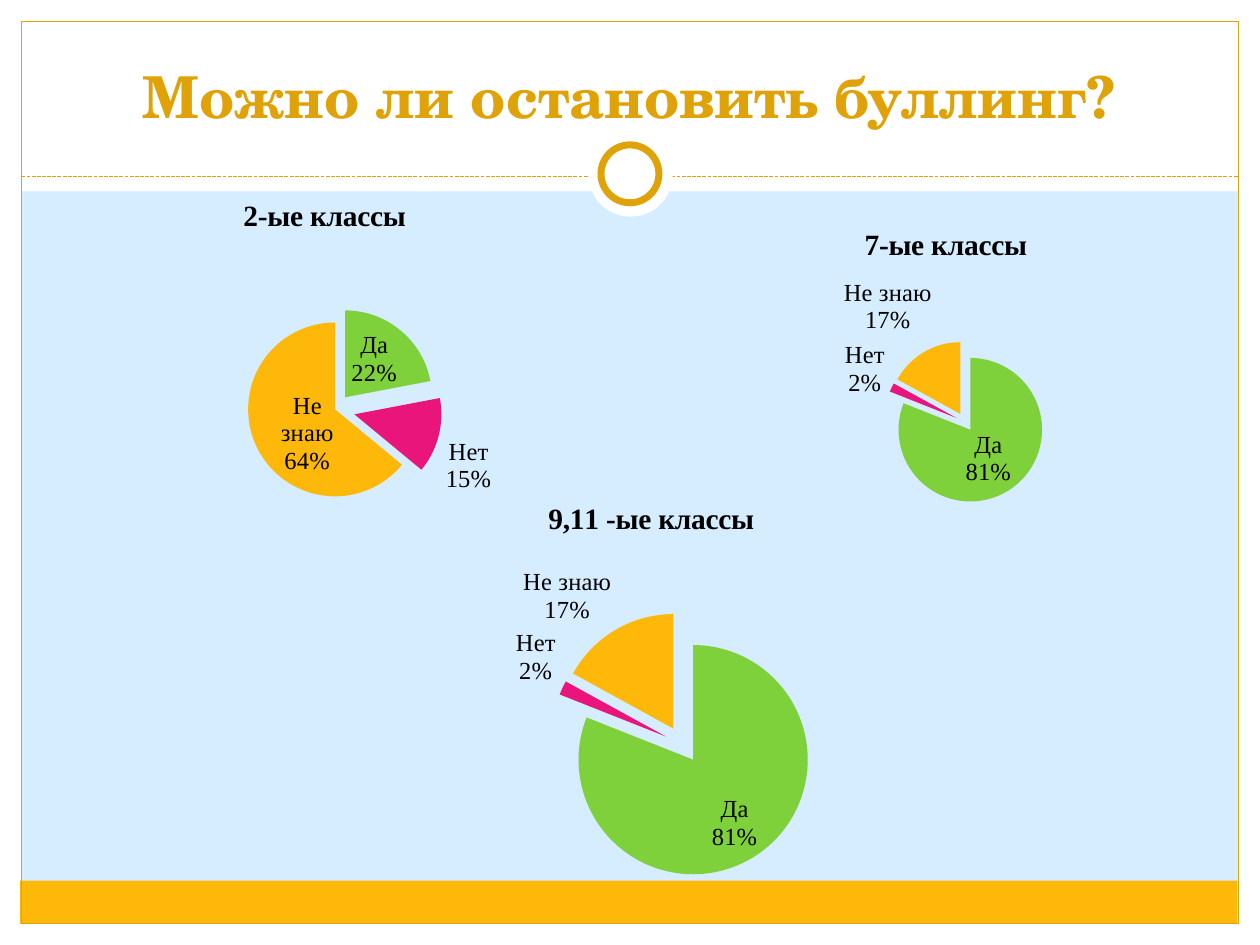
"""Build a slide with three pie charts on whether bullying can be stopped."""
from dataclasses import dataclass

from lxml import etree
from pptx import Presentation
from pptx.chart.data import CategoryChartData
from pptx.dml.color import RGBColor
from pptx.enum.chart import XL_CHART_TYPE, XL_LABEL_POSITION
from pptx.enum.dml import MSO_LINE
from pptx.enum.shapes import MSO_CONNECTOR, MSO_SHAPE
from pptx.enum.text import MSO_ANCHOR, PP_ALIGN
from pptx.oxml import parse_xml
from pptx.oxml.ns import nsdecls, qn
from pptx.util import Inches, Pt

PIE = XL_CHART_TYPE.PIE
FIT, OUTSIDE = XL_LABEL_POSITION.BEST_FIT, XL_LABEL_POSITION.OUTSIDE_END
DASH = MSO_LINE.SQUARE_DOT
LINE = MSO_CONNECTOR.STRAIGHT
RECT, OVAL = MSO_SHAPE.RECTANGLE, MSO_SHAPE.OVAL
BOTTOM, CENTER = MSO_ANCHOR.BOTTOM, PP_ALIGN.CENTER


@dataclass(frozen=True)
class Theme:
    back: RGBColor = RGBColor.from_string("D6ECFF")
    white: RGBColor = RGBColor.from_string("FFFFFF")
    black: RGBColor = RGBColor.from_string("000000")
    gold: RGBColor = RGBColor.from_string("E0A209")
    green: RGBColor = RGBColor.from_string("7FD13B")
    pink: RGBColor = RGBColor.from_string("EA157A")
    amber: RGBColor = RGBColor.from_string("FEB80A")
    head: str = "TeX Gyre Schola"
    body: str = "Times New Roman"
    big: Pt = Pt(33)
    mid: Pt = Pt(16.8)
    small: Pt = Pt(14)


theme = Theme()


def add_form(kind, box, fill=None, line=None, width=0.75):
    form = slide.shapes.add_shape(kind, *map(Inches, box))
    form.shadow.inherit = False
    if fill is None:
        form.fill.background()
    else:
        form.fill.solid()
        form.fill.fore_color.rgb = fill
    if line is None:
        form.line.fill.background()
    else:
        form.line.color.rgb = line
        form.line.width = Pt(width)


def make_layout(x, y, w=None, h=None):
    parts = {"xMode": "edge", "yMode": "edge", "x": x, "y": y}
    if w is not None:
        parts = {"layoutTarget": "inner", **parts, "w": w, "h": h}
    body = "".join(f'<c:{tag} val="{val}"/>' for tag, val in parts.items())
    return parse_xml(
        f'<c:layout {nsdecls("c")}><c:manualLayout>{body}</c:manualLayout></c:layout>'
    )


deck = Presentation()
deck.slide_width, deck.slide_height = Inches(10), Inches(7.5)
slide = deck.slides.add_slide(deck.slide_layouts[6])
slide.background.fill.solid()
slide.background.fill.fore_color.rgb = theme.back

for box in (
    (0, 7.33, 10, 0.17),
    (0, 0, 10, 1.52),
    (0, 0, 0.17, 7.5),
    (9.83, 0, 0.17, 7.5),
):
    add_form(RECT, box, theme.white)
add_form(RECT, (0.16, 6.99, 9.66, 0.34), theme.amber)
add_form(RECT, (0.17, 0.17, 9.66, 7.16), line=theme.gold)

rule = slide.shapes.add_connector(
    LINE, Inches(0.17), Inches(1.4), Inches(9.83), Inches(1.4)
)
rule.line.color.rgb = theme.gold
rule.line.width = Pt(0.75)
rule.line.dash_style = DASH
etree.SubElement(rule._element.spPr, qn("a:effectLst"))

add_form(OVAL, (4.67, 1.05, 0.67, 0.67), theme.white)
add_form(OVAL, (4.77, 1.15, 0.46, 0.46), theme.white, theme.gold, 4)

title = slide.shapes.add_textbox(
    Inches(0.33), Inches(0.25), Inches(9.33), Inches(0.83)
).text_frame
title.word_wrap = True
title.vertical_anchor = BOTTOM
para = title.paragraphs[0]
para.text = "Можно ли остановить буллинг?"
para.alignment = CENTER
para.font.name, para.font.size, para.font.bold = theme.head, theme.big, True
para.font.color.rgb = theme.gold

names = ("Да", "Нет", "Не знаю")
tints = (theme.green, theme.pink, theme.amber)
pies = (
    ("2-ые классы", (0.33, 1.41, 4.44, 2.97), (22, 14, 64),
     (18, 23, 0), (2.66, 3.25, 0.69), (1.89, 1.52)),
    ("7-ые классы", (5.31, 1.64, 4.38, 2.9), (81, 2, 17),
     (13, 13, 13), (7.66, 3.35, 0.57), (6.82, 1.75)),
    ("9,11 -ые классы", (2.97, 3.83, 4.45, 3.28), (81, 2, 17),
     (16, 16, 16), (5.42, 5.91, 0.91), (4.31, 3.92)),
)
charts = []
for label, box, vals, pulls, (mid_x, mid_y, rad), (cap_x, cap_y) in pies:
    left, top, wide, high = box
    data = CategoryChartData()
    data.categories = names
    data.add_series("Series 1", vals)
    chart = slide.shapes.add_chart(PIE, *map(Inches, box), data).chart
    charts.append(chart)
    chart.has_legend = False
    chart.font.name, chart.font.size = theme.body, theme.small
    chart.font.color.rgb = theme.black

    chart.has_title = True
    cap = chart.chart_title.text_frame.paragraphs[0]
    cap.text = label
    cap.font.name, cap.font.size, cap.font.bold = theme.body, theme.mid, True
    cap.font.color.rgb = theme.black
    head = chart.chart_title._element
    for old in head.findall(qn("c:layout")):
        head.remove(old)
    head.find(qn("c:tx")).addnext(
        make_layout((cap_x - left) / wide, (cap_y - top) / high)
    )

    plot = chart.plots[0]
    plot.vary_by_categories = True
    area = plot._element.getparent()
    for old in area.findall(qn("c:layout")):
        area.remove(old)
    area.insert(0, make_layout(
        (mid_x - rad - left) / wide, (mid_y - rad - top) / high,
        2 * rad / wide, 2 * rad / high,
    ))
    tags = plot.series[0].data_labels
    tags.show_category_name = tags.show_percentage = True
    tags.show_value = False
    tags.number_format, tags.number_format_is_linked = "0%", False
    tags.position = FIT
    tags.font.name, tags.font.size = theme.body, theme.small
    tags.font.color.rgb = theme.black
    for old in tags._element.findall(qn("c:showLeaderLines")):
        tags._element.remove(old)
    gap = etree.SubElement(tags._element, qn("c:separator"))
    gap.text = "\n"
    etree.SubElement(tags._element, qn("c:showLeaderLines"), val="0")

    for spot, (tint, pull) in enumerate(zip(tints, pulls)):
        point = plot.series[0].points[spot]
        point.format.fill.solid()
        point.format.fill.fore_color.rgb = tint
        point.format.line.fill.background()
        shift = etree.Element(qn("c:explosion"), val=str(pull))
        point.format.fill._xPr.addprevious(shift)

note = charts[0].plots[0].series[0].points[1].data_label
note.text_frame.text = "Нет\n15%"
note.position = OUTSIDE
for para in note.text_frame.paragraphs:
    para.font.name, para.font.size = theme.body, theme.small
    para.font.color.rgb = theme.black

deck.save("out.pptx")
